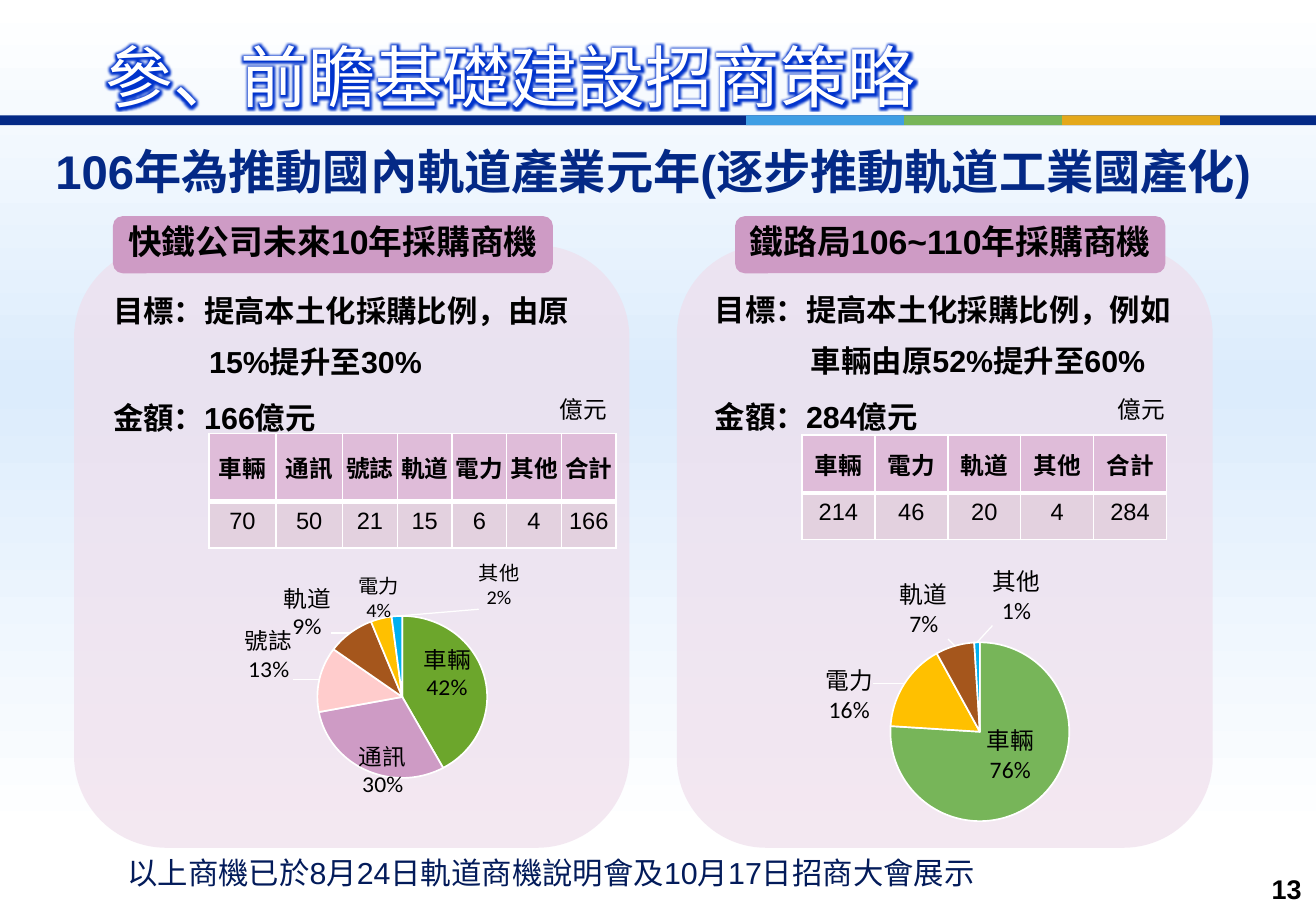
import pptx
import pptx.chart.data
import pptx.dml.color
import pptx.enum.chart
import pptx.enum.shapes
import pptx.enum.text
import pptx.oxml
import pptx.oxml.ns
import pptx.util
from pptx.util import Inches

COLORS = {
    "white": "FFFFFF", "black": "000000", "sky": "DCECFC", "navy": "042986",
    "ink": "031B5A", "glow": "0033CC", "blue": "3F9EE4", "green": "77B559",
    "gold": "E4A81B", "panel": "EFDEEC", "mauve": "CE9BC5", "header": "DFBCD9",
    "cell": "E3D1DF", "leaf": "6CA62C", "pink": "FFCCCC", "brown": "A5561C",
    "amber": "FFC000", "cyan": "00B0F0",
}
ALIGN = pptx.enum.text.PP_ALIGN
ANCHOR = pptx.enum.text.MSO_ANCHOR
SHAPE = pptx.enum.shapes.MSO_SHAPE
NAMESPACES = pptx.oxml.ns.nsdecls("a", "c")
qn = pptx.oxml.ns.qn


def rgb(name):
    return pptx.dml.color.RGBColor.from_string(COLORS[name])


def solid_xml(name):
    return f'<a:solidFill><a:srgbClr val="{COLORS[name]}"/></a:solidFill>'


class SlideBuilder:
    def __init__(self, presentation):
        self.font = "Arial"
        self.slide = presentation.slides.add_slide(presentation.slide_layouts[1])

    def background(self, stops):
        fill = self.slide.background.fill
        fill.gradient()
        fill.gradient_angle = 270
        stop_list = next(self.slide.element.iter(qn("a:gsLst")))
        for stop in list(stop_list):
            stop_list.remove(stop)
        for position, color in stops:
            stop_list.append(pptx.oxml.parse_xml(
                f'<a:gs {NAMESPACES} pos="{position * 1000}">'
                f'<a:srgbClr val="{COLORS[color]}"/></a:gs>'))

    def set_text(self, frame, lines, size, color="black", bold=False, align=ALIGN.LEFT,
                 anchor=ANCHOR.TOP, hanging=0, spacing=None, gap=0, insets=(0.1, 0.05)):
        """Fill a text frame; spacing and gap are points, hanging and insets inches."""
        frame.word_wrap = True
        frame.vertical_anchor = anchor
        frame.margin_left = frame.margin_right = Inches(insets[0])
        frame.margin_top = frame.margin_bottom = Inches(insets[1])
        frame.text = "\n".join(lines)
        for index, paragraph in enumerate(frame.paragraphs):
            properties = paragraph._p.get_or_add_pPr()
            properties.set("marL", str(Inches(hanging)))
            properties.set("indent", str(Inches(-hanging)))
            properties.append(pptx.oxml.parse_xml(f"<a:buNone {NAMESPACES}/>"))
            paragraph.alignment = align
            paragraph.space_before = pptx.util.Pt(gap if index else 0)
            if spacing:
                paragraph.line_spacing = pptx.util.Pt(spacing)
            for run in paragraph.runs:
                run.font.name = self.font
                run.font.size = pptx.util.Pt(size)
                run.font.bold = bold
                run.font.color.rgb = rgb(color)

    def placeholder(self, index, box, text, size, color, **style):
        shape = self.slide.placeholders[index]
        shape.left, shape.top, shape.width, shape.height = map(Inches, box)
        self.set_text(shape.text_frame, [text], size, color, **style)
        shape.text_frame.auto_size = pptx.enum.text.MSO_AUTO_SIZE.NONE
        return shape

    def glow(self, shape, color, points):
        for run in shape.text_frame.paragraphs[0].runs:
            fill = run.font._element.find(qn("a:solidFill"))
            fill.addnext(pptx.oxml.parse_xml(
                f'<a:effectLst {NAMESPACES}><a:glow rad="{pptx.util.Pt(points)}">'
                f'<a:srgbClr val="{COLORS[color]}"/></a:glow></a:effectLst>'))

    def shape(self, kind, box, fill=None, opacity=100):
        shape = self.slide.shapes.add_shape(kind, *map(Inches, box))
        shape.shadow.inherit = False
        shape.line.fill.background()
        if fill is None:
            shape.fill.background()
            return shape
        shape.fill.solid()
        shape.fill.fore_color.rgb = rgb(fill)
        if opacity < 100:
            color = next(shape._element.spPr.iter(qn("a:srgbClr")))
            color.append(pptx.oxml.parse_xml(
                f'<a:alpha {NAMESPACES} val="{opacity * 1000}"/>'))
        return shape

    def text(self, box, text, size, **style):
        shape = self.slide.shapes.add_textbox(*map(Inches, box))
        self.set_text(shape.text_frame, [text], size, **style)

    def table(self, left, top, widths, heights, rows):
        table = self.slide.shapes.add_table(
            len(rows), len(widths), Inches(left), Inches(top),
            Inches(sum(widths)), Inches(sum(heights))).table
        for column, width in zip(table.columns, widths):
            column.width = Inches(width)
        for row_index, values in enumerate(rows):
            table.rows[row_index].height = Inches(heights[row_index])
            is_header = row_index == 0
            for column_index, value in enumerate(values):
                cell = table.cell(row_index, column_index)
                self.set_text(cell.text_frame, [value], 14, bold=is_header,
                              align=ALIGN.CENTER, insets=(0, 0.05))
                cell.vertical_anchor = ANCHOR.MIDDLE if is_header else ANCHOR.TOP
                cell.margin_left = cell.margin_right = 0
                cell.fill.solid()
                cell.fill.fore_color.rgb = rgb("header" if is_header else "cell")
                sides = {"L": 1, "R": 1, "T": 1 if is_header else 3,
                         "B": 3 if is_header else 1}
                for position, (side, width) in enumerate(sides.items()):
                    cell._tc.get_or_add_tcPr().insert(position, pptx.oxml.parse_xml(
                        f'<a:ln{side} {NAMESPACES} w="{pptx.util.Pt(width)}">'
                        f'{solid_xml("white")}</a:ln{side}>'))

    def pie(self, box, plot, slices, show_percent):
        """Draw a pie; each slice is name, value, colour, label size, label offset."""
        data = pptx.chart.data.CategoryChartData()
        data.categories = [part[0] for part in slices]
        data.add_series("採購商機", [part[1] for part in slices])
        chart = self.slide.shapes.add_chart(
            pptx.enum.chart.XL_CHART_TYPE.PIE, *map(Inches, box), data).chart
        chart.has_legend = chart.has_title = False
        chart.font.name = "Calibri"
        chart.font.size = pptx.util.Pt(14)
        chart.font.color.rgb = rgb("black")
        chart.plots[0].vary_by_categories = True
        series = chart.plots[0].series[0]
        for index, part in enumerate(slices):
            style = series.points[index].format
            style.fill.solid()
            style.fill.fore_color.rgb = rgb(part[2])
            style.line.color.rgb = rgb("white")
            style.line.width = pptx.util.Pt(1)
        flags = (f'<c:showLegendKey val="0"/><c:showVal val="{int(not show_percent)}"/>'
                 '<c:showCatName val="1"/><c:showSerName val="0"/>'
                 f'<c:showPercent val="{int(show_percent)}"/><c:showBubbleSize val="0"/>'
                 '<c:separator>\n</c:separator>')
        number_format = '<c:numFmt formatCode="0%" sourceLinked="0"/>'
        labels = "".join(
            f'<c:dLbl><c:idx val="{index}"/><c:layout><c:manualLayout>'
            f'<c:x val="{x}"/><c:y val="{y}"/></c:manualLayout></c:layout>{number_format}'
            f'<c:spPr><a:noFill/></c:spPr><c:txPr><a:bodyPr/><a:p><a:pPr>'
            f'<a:defRPr sz="{size * 100}" b="0">{solid_xml("black")}'
            f'<a:latin typeface="Calibri"/></a:defRPr></a:pPr></a:p></c:txPr>'
            f'<c:dLblPos val="outEnd"/>{flags}</c:dLbl>'
            for index, (_, _, _, size, (x, y)) in enumerate(slices))
        series._element.find(qn("c:cat")).addprevious(pptx.oxml.parse_xml(
            f'<c:dLbls {NAMESPACES}>{labels}{number_format}{flags}'
            f'<c:showLeaderLines val="1"/><c:leaderLines><c:spPr><a:ln w="9525">'
            f'{solid_xml("white")}</a:ln></c:spPr></c:leaderLines></c:dLbls>'))
        area = chart._chartSpace.chart.plotArea
        for layout in area.findall(qn("c:layout")):
            area.remove(layout)
        sizes = "".join(f'<c:{key} val="{value}"/>' for key, value in zip("xywh", plot))
        area.insert(0, pptx.oxml.parse_xml(
            f'<c:layout {NAMESPACES}><c:manualLayout><c:layoutTarget val="inner"/>'
            f'<c:xMode val="edge"/><c:yMode val="edge"/>{sizes}'
            f'</c:manualLayout></c:layout>'))

    def panel(self, box, heading_box, heading, lines, unit_left):
        body = self.shape(SHAPE.ROUNDED_RECTANGLE, box, "panel", 69)
        self.set_text(body.text_frame, lines, 18, bold=True, hanging=0.79,
                      spacing=30, gap=3)
        pill = self.shape(SHAPE.ROUNDED_RECTANGLE, heading_box, "mauve")
        self.set_text(pill.text_frame, [heading], 20, bold=True, align=ALIGN.CENTER,
                      spacing=21.6, insets=(0, 0.05))
        self.text((unit_left, 3.2, 0.7, 0.34), "億元", 14)


def main():
    presentation = pptx.Presentation()
    presentation.slide_width, presentation.slide_height = Inches(10.83), Inches(7.5)
    builder = SlideBuilder(presentation)
    builder.background([(0, "white"), (42, "sky"), (92, "white"), (100, "white")])
    builder.shape(SHAPE.RECTANGLE, (0, 0.95, 10.83, 0.08), "navy")
    for index, color in enumerate(("blue", "green", "gold")):
        builder.shape(SHAPE.RECTANGLE, (6.14 + 1.3 * index, 0.95, 1.3, 0.08), color)
    title = builder.placeholder(0, (0.77, 0.29, 7.09, 0.67), "參、前瞻基礎建設招商策略",
                                40, "white", anchor=ANCHOR.MIDDLE)
    builder.glow(title, "glow", 5)
    builder.placeholder(1, (-0.02, 1.12, 10.79, 0.57),
                        "106年為推動國內軌道產業元年(逐步推動軌道工業國產化)",
                        28, "navy", bold=True, align=ALIGN.CENTER)

    builder.panel((0.61, 2.02, 4.57, 4.96), (0.93, 1.78, 3.62, 0.47),
                  "快鐵公司未來10年採購商機",
                  ["目標：提高本土化採購比例，由原15%提升至30%", "金額：166億元"], 4.51)
    builder.table(1.72, 3.57, [0.55] * 2 + [0.45] * 5, [0.56, 0.38],
                  [["車輛", "通訊", "號誌", "軌道", "電力", "其他", "合計"],
                   ["70", "50", "21", "15", "6", "4", "166"]])
    builder.pie((1.16, 4.56, 4.02, 2.33), (0.36, 0.23, 0.35, 0.6), [
        ("車輛", 0.42, "leaf", 14, (-0.14, 0.1)),
        ("通訊", 0.3, "mauve", 14, (0.09, -0.14)),
        ("號誌", 0.13, "pink", 14, (-0.04, 0.02)),
        ("軌道", 0.09, "brown", 14, (-0.03, 0.05)),
        ("電力", 0.04, "amber", 12, (0.04, 0.04)),
        ("其他", 0.02, "cyan", 12, (0.21, 0)),
    ], show_percent=False)

    builder.panel((5.57, 2.02, 4.41, 4.96), (6.05, 1.78, 3.54, 0.47),
                  "鐵路局106~110年採購商機",
                  ["目標：提高本土化採購比例，例如車輛由原52%提升至60%", "金額：284億元"], 9.1)
    builder.table(6.6, 3.58, [0.6] * 5, [0.48, 0.38],
                  [["車輛", "電力", "軌道", "其他", "合計"],
                   ["214", "46", "20", "4", "284"]])
    builder.pie((6.06, 4.56, 4.09, 2.64), (0.31, 0.27, 0.36, 0.57), [
        ("車輛", 76, "green", 14, (-0.12, -0.25)),
        ("電力", 16, "amber", 14, (-0.05, 0.14)),
        ("軌道", 7, "brown", 14, (-0.01, 0)),
        ("其他", 1, "cyan", 14, (0.08, -0.03)),
    ], show_percent=True)

    closing = builder.shape(SHAPE.ROUNDED_RECTANGLE, (0.93, 6.98, 9.53, 0.41))
    builder.set_text(closing.text_frame,
                     ["以上商機已於8月24日軌道商機說明會及10月17日招商大會展示"], 18, "ink",
                     anchor=ANCHOR.MIDDLE, hanging=1.28, spacing=21, insets=(0.1, 0.04))
    builder.text((8.28, 7.14, 2.53, 0.36), "13", 16, bold=True,
                 align=ALIGN.RIGHT, anchor=ANCHOR.MIDDLE)
    presentation.save("out.pptx")


if __name__ == "__main__":
    main()
